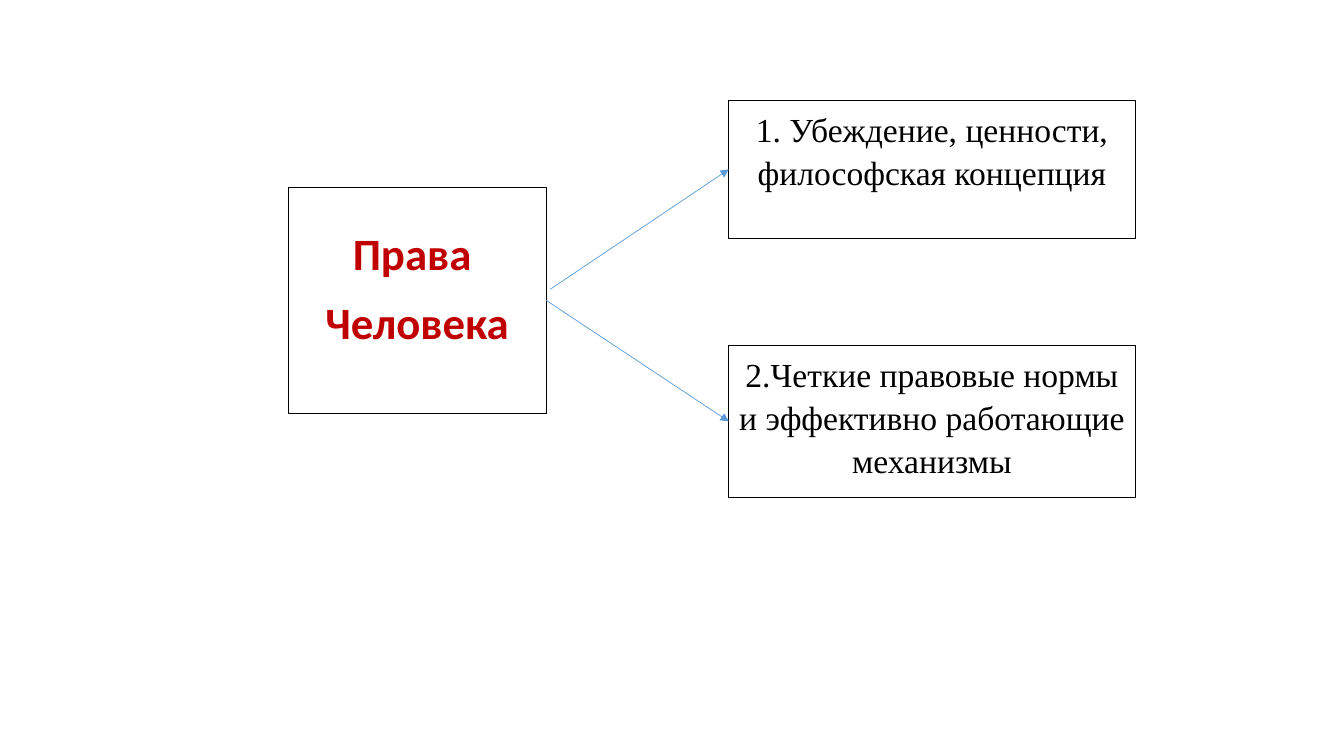
from lxml import etree
from pptx import Presentation
from pptx.dml.color import RGBColor
from pptx.enum.shapes import MSO_CONNECTOR, MSO_SHAPE
from pptx.enum.text import MSO_ANCHOR, PP_ALIGN
from pptx.oxml.ns import qn
from pptx.util import Pt

RECTANGLE = MSO_SHAPE.RECTANGLE
STRAIGHT = MSO_CONNECTOR.STRAIGHT
TOP, MIDDLE = MSO_ANCHOR.TOP, MSO_ANCHOR.MIDDLE
CENTER = PP_ALIGN.CENTER


def color(hex_code):
    return RGBColor.from_string(hex_code)


class Diagram:
    """Draws bordered text boxes and arrows on one slide."""

    paper = "FFFFFF"
    ink = "000000"
    accent = "C00000"
    arrow_blue = "5B9BD5"

    def __init__(self, slide):
        self.slide = slide

    def box(self, bounds, lines, font, size, text_color, bold=False,
            border=0.5, anchor=TOP, insets=(7.2, 3.6, 7.2, 3.6)):
        shape = self.slide.shapes.add_shape(RECTANGLE, *map(Pt, bounds))
        shape.shadow.inherit = False
        shape.fill.solid()
        shape.fill.fore_color.rgb = color(self.paper)
        shape.line.color.rgb = color(self.ink)
        shape.line.width = Pt(border)
        frame = shape.text_frame
        frame.word_wrap = True
        frame.vertical_anchor = anchor
        (frame.margin_left, frame.margin_top,
         frame.margin_right, frame.margin_bottom) = map(Pt, insets)
        frame.text = "\n".join(lines)
        for paragraph in frame.paragraphs:
            paragraph.alignment = CENTER
            paragraph.line_spacing = 1.07
            paragraph.space_after = Pt(8)
            paragraph.font.name = font
            paragraph.font.size = Pt(size)
            paragraph.font.bold = bold
            paragraph.font.color.rgb = color(text_color)

    def arrow(self, start, end):
        connector = self.slide.shapes.add_connector(
            STRAIGHT, *map(Pt, (*start, *end)))
        connector.line.color.rgb = color(self.arrow_blue)
        connector.line.width = Pt(0.5)
        etree.SubElement(connector.line._get_or_add_ln(),
                         qn("a:tailEnd"), type="triangle")
        etree.SubElement(connector._element.spPr, qn("a:effectLst"))


def main():
    presentation = Presentation()
    presentation.slide_width, presentation.slide_height = Pt(960), Pt(540)
    blank = presentation.slide_layouts[6]
    diagram = Diagram(presentation.slides.add_slide(blank))

    diagram.box((205.9, 134, 184.3, 161.3), ["Права ", "Человека"],
                "Calibri", 32, diagram.accent, bold=True, border=0.75,
                anchor=MIDDLE, insets=(5, 2, 5, 24))

    meaning_left, meaning_width = 520.6, 290.2
    meanings = [
        ("1. Убеждение, ценности, философская концепция",
         72, 98.6, (393.1, 206.6), 121),
        ("2.Четкие правовые нормы и эффективно работающие механизмы",
         247, 108, (390.2, 214.6), 301),
    ]
    for meaning, top, height, arrow_start, arrow_end_y in meanings:
        diagram.box((meaning_left, top, meaning_width, height), [meaning],
                    "Times New Roman", 24, diagram.ink)
        diagram.arrow(arrow_start, (meaning_left, arrow_end_y))

    presentation.save("out.pptx")


if __name__ == "__main__":
    main()
